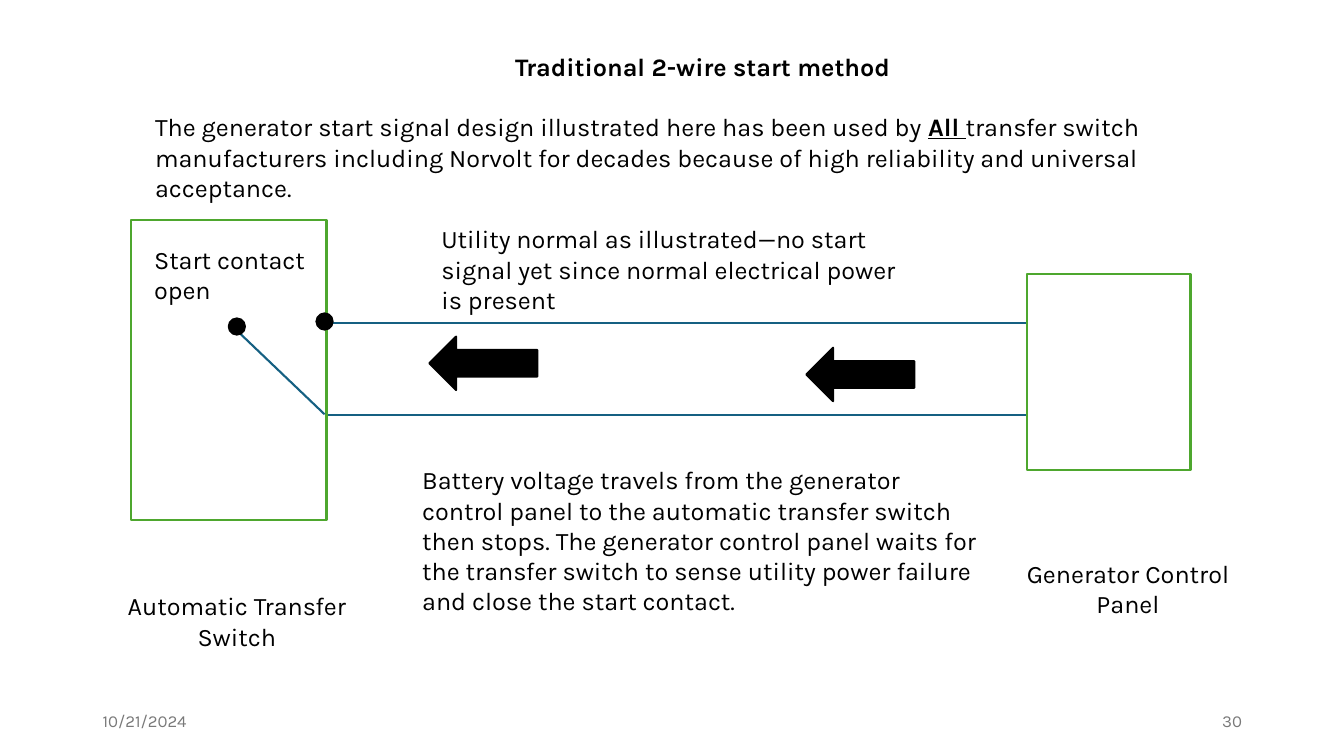
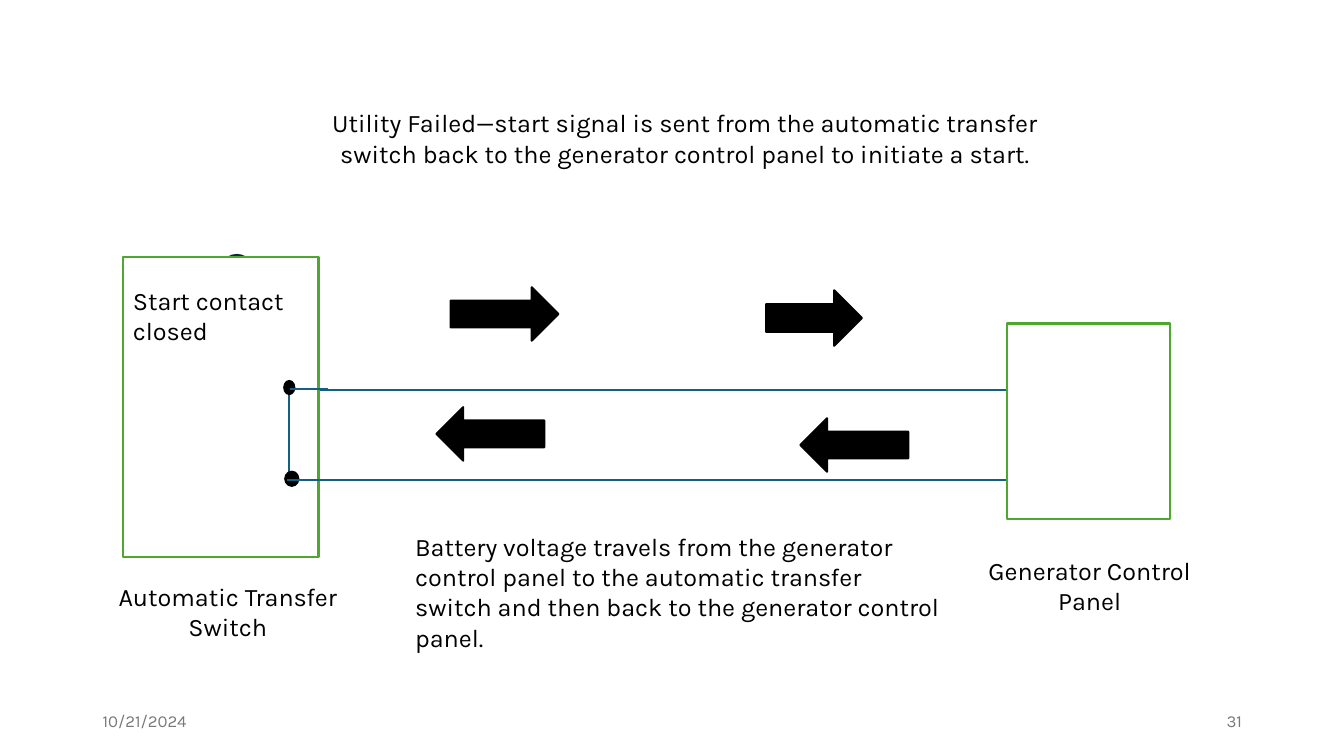
from lxml import etree
from pptx import Presentation, util as u
from pptx.dml.color import RGBColor
from pptx.enum import shapes, text
from pptx.oxml.ns import qn

# The grid has ten columns and ten rows to the inch.
CELL = u.Inches(0.1)
COLS, ROWS = 133.33, 75
FONT = "Karla"
HUES = {"wire": "156082", "edge": "4EA72E", "deep": "092A39",
        "black": "000000", "white": "FFFFFF", "grey": "797979"}
INK = {name: RGBColor.from_string(hue) for name, hue in HUES.items()}
LEFT, MID, RIGHT = text.PP_ALIGN.LEFT, text.PP_ALIGN.CENTER, text.PP_ALIGN.RIGHT
FORM = shapes.MSO_SHAPE

# kind: preset, fill, line, usual size
KINDS = {
    "switch": (FORM.RECTANGLE, "white", "edge", (19.4, 29.8)),
    "panel": (FORM.RECTANGLE, "white", "edge", (16.2, 19.4)),
    "back": (FORM.LEFT_ARROW, "black", "black", (10.7, 5.3)),
    "forth": (FORM.RIGHT_ARROW, "black", "black", (10.7, 5.3)),
    "dot": (FORM.OVAL, "black", "black", (1.6, 1.6)),
    "pin": (FORM.FLOWCHART_CONNECTOR, "black", "black", (1.2, 1.4)),
    "knob": (FORM.FLOWCHART_CONNECTOR, "wire", "deep", (3.4, 3.6)),
}

# Parts run from back to front; a wire gives its two ends.
# Labels give place and width, words and alignment.
SLIDES = [
    {
        "page": "30",
        "parts": [
            ("wire", 26, 32, 103.5, 32),
            ("wire", 28.1, 41.2, 105.6, 41.2),
            ("switch", 13, 21.8),
            ("panel", 101.9, 27.2),
            ("wire", 23.3, 32.6, 32.2, 41.1),
            ("back", 42.6, 33.4),
            ("back", 80, 34.5),
            ("dot", 22.7, 31.6),
            ("dot", 31.4, 31.1),
        ],
        "switch": (11.5, 58.1),
        "panel": (98.8, 54.9),
        "labels": [
            (40.9, 45.6, 58, 16.2, "Battery voltage travels from the generator control panel "
             "to the automatic transfer switch then stops. The generator control panel waits for "
             "the transfer switch to sense utility power failure and close the start contact.", LEFT),
            (14.3, 23.7, 17.1, 7.1, "Start contact open", LEFT),
            (42.8, 21.7, 49.4, 7.1, "Utility normal as illustrated—no start signal yet "
             "since normal electrical power is present", LEFT),
        ],
    },
    {
        "page": "31",
        "parts": [
            ("wire", 24.9, 38.7, 102.3, 38.7),
            ("wire", 23.5, 47.6, 101, 47.6),
            ("knob", 21.8, 25.3),
            ("switch", 12.2, 25.5),
            ("panel", 99.9, 32.1),
            ("forth", 44.7, 28.5),
            ("forth", 76, 28.8, 9.5, 5.5),
            ("wire", 28.7, 38.7, 28.7, 47.3),
            ("pin", 28.2, 37.8, 1, 1.3),
            ("pin", 28.3, 46.8, 1.3, 1.4),
            ("wire", 32.5, 38.6, 28.8, 38.6),
            ("wire", 32.5, 47.6, 28.5, 47.6),
            ("back", 79.4, 41.5),
            ("back", 43.3, 40.4),
        ],
        "switch": (10.6, 57.2),
        "panel": (95, 54.6),
        "labels": [
            (40.2, 52.2, 54, 10.1, "Battery voltage travels from the generator control panel "
             "to the automatic transfer switch and then back to the generator control panel.", LEFT),
            (12.2, 27.8, 17.7, 7.1, "Start contact closed", LEFT),
            (29.9, 10.2, 76.1, 7.1, "Utility Failed—start signal is sent from the automatic "
             "transfer switch back to the generator control panel to initiate a start.", MID),
        ],
    },
]


def scale(*cells):
    """Turn grid cells into lengths."""
    return [round(n * CELL) for n in cells]


def write(slide, spot, words, align=LEFT, size=18, hue="black"):
    frame = slide.shapes.add_textbox(*scale(*spot)).text_frame
    frame.word_wrap = True
    par = frame.paragraphs[0]
    par.text, par.alignment = words, align
    par.font.name, par.font.size = FONT, u.Pt(size)
    par.font.color.rgb = INK[hue]
    return frame


deck = Presentation()
deck.slide_width, deck.slide_height = scale(COLS, ROWS)

for plan in SLIDES:
    slide = deck.slides.add_slide(deck.slide_layouts[6])

    for kind, *spot in plan["parts"]:
        if kind == "wire":
            part = slide.shapes.add_connector(shapes.MSO_CONNECTOR.STRAIGHT, *scale(*spot))
            etree.SubElement(part._element.spPr, qn("a:effectLst"))
            edge = "wire"
        else:
            form, fill, edge, size = KINDS[kind]
            part = slide.shapes.add_shape(form, *scale(*spot[:2], *(spot[2:] or size)))
            part.shadow.inherit = False
            part.fill.solid()
            part.fill.fore_color.rgb = INK[fill]
        part.line.color.rgb = INK[edge]
        part.line.width = u.Pt(1.5)

    write(slide, (*plan["switch"], 24, 7.1), "Automatic Transfer Switch", MID)
    write(slide, (*plan["panel"], 26.2, 7.1), "Generator Control Panel", MID)
    for *spot, words, align in plan["labels"]:
        write(slide, spot, words, align)

    for col, words, align in ((9.2, "10/21/2024", LEFT), (94.2, plan["page"], RIGHT)):
        foot = write(slide, (col, 69.5, 30, 4), words, align, 12, "grey")
        foot.vertical_anchor = text.MSO_ANCHOR.MIDDLE

head = write(deck.slides[0], (14.4, 4.6, 110.6, 16), "Traditional 2-wire start method", MID)
head.paragraphs[0].font.bold = True
head.paragraphs[0].space_after = u.Pt(21.5)
intro = head.add_paragraph()
for words, strong in (
    ("The generator start signal design illustrated here has been used by ", False),
    ("All ", True),
    ("transfer switch manufacturers including Norvolt for decades because of "
     "high reliability and universal acceptance.", False),
):
    run = intro.add_run()
    run.text = words
    run.font.bold = run.font.underline = strong
intro.font.name, intro.font.size = FONT, u.Pt(18)
intro.font.color.rgb = INK["black"]

deck.save("out.pptx")
